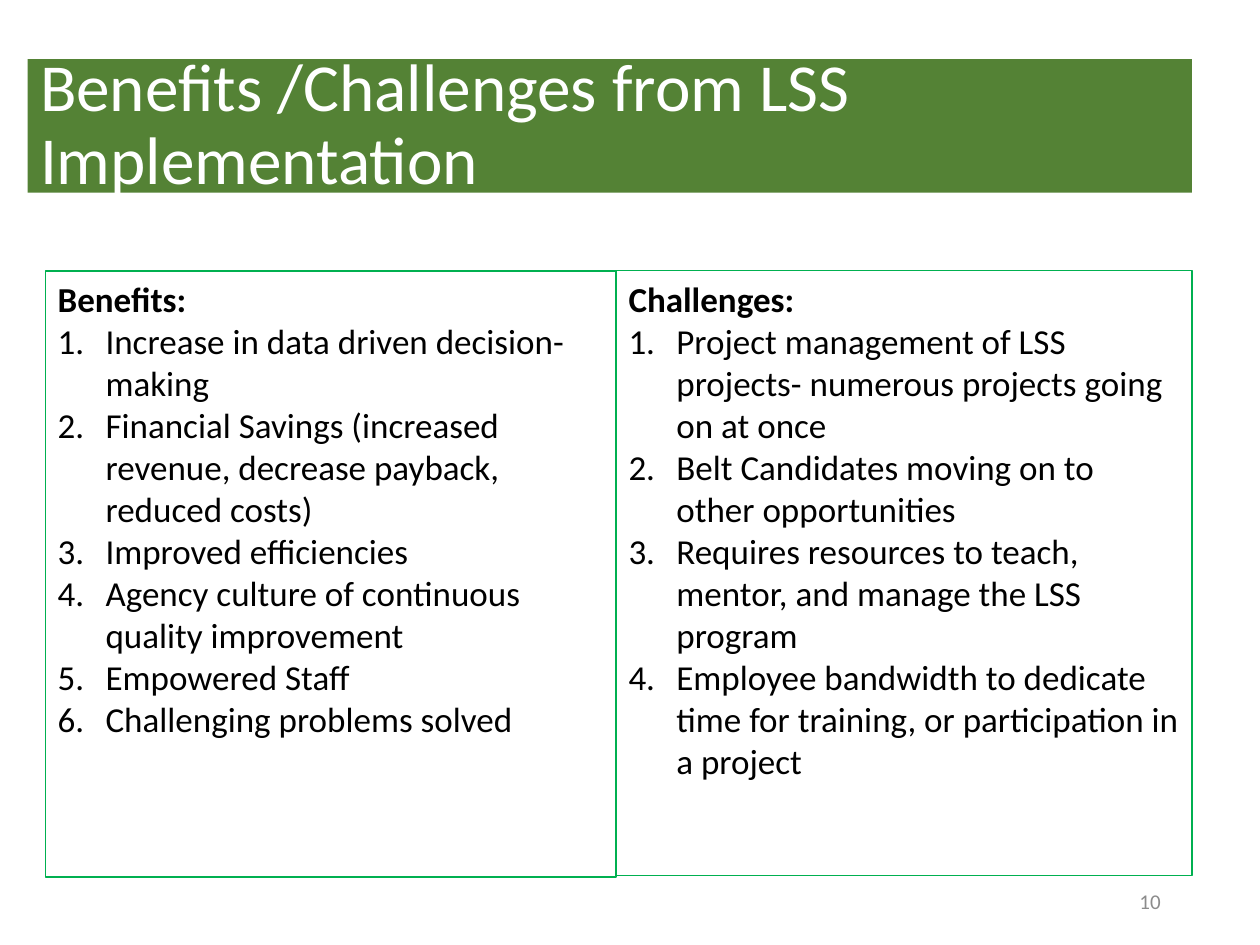
from lxml import etree
from pptx import Presentation
from pptx.dml.color import RGBColor
from pptx.enum.shapes import MSO_SHAPE as Shape
from pptx.enum.text import MSO_ANCHOR as Anchor, PP_ALIGN as Align
from pptx.oxml.ns import qn
from pptx.util import Inches, Pt

# Content
TITLE = "Benefits /Challenges from LSS Implementation"
PAGE_NUMBER = "10"
PANELS = [
    {"heading": "Benefits:", "width": 4.53, "height": 4.81, "points": [
        "Increase in data driven decision-making",
        "Financial Savings (increased revenue, decrease payback, reduced costs)",
        "Improved efficiencies",
        "Agency culture of continuous quality improvement",
        "Empowered Staff",
        "Challenging problems solved",
    ]},
    {"heading": "Challenges:", "width": 4.57, "height": 4.8, "points": [
        "Project management of LSS projects- numerous projects going on at once",
        "Belt Candidates moving on to other opportunities",
        "Requires resources to teach, mentor, and manage the LSS program",
        "Employee bandwidth to dedicate time for training, or participation in a project",
    ]},
]

# Format
COLORS = {"banner": "548235", "border": "00B050", "title": "FFFFFF",
          "body": "000000", "number": "8C8C8C"}
FONT = "Calibri"
PANEL_LEFT, PANEL_TOP = 0.36, 2.15
NUMBER_INDENT = Inches(0.38)


def color(name):
    return RGBColor.from_string(COLORS[name])


def add_rect(left, top, width, height, fill=None, border=None):
    rect = slide.shapes.add_shape(Shape.RECTANGLE, Inches(left), Inches(top),
                                  Inches(width), Inches(height))
    rect.shadow.inherit = False
    if fill:
        rect.fill.solid()
        rect.fill.fore_color.rgb = color(fill)
    else:
        rect.fill.background()
    if border:
        rect.line.color.rgb = color(border)
        rect.line.width = Pt(0.75)
    else:
        rect.line.fill.background()
    return rect


def write(shape, lines, size, ink, anchor=Anchor.TOP, align=Align.LEFT,
          spacing=None, heading=False, numbered=False):
    frame = shape.text_frame
    frame.word_wrap = True
    frame.vertical_anchor = anchor
    for i, line in enumerate(lines):
        paragraph = frame.paragraphs[0] if i == 0 else frame.add_paragraph()
        paragraph.alignment = align
        if spacing:
            paragraph.line_spacing = spacing
        run = paragraph.add_run()
        run.text = line
        run.font.name = FONT
        run.font.size = Pt(size)
        run.font.bold = heading and i == 0
        run.font.color.rgb = color(ink)
        if numbered and not (heading and i == 0):
            props = paragraph._p.get_or_add_pPr()
            props.set("marL", str(NUMBER_INDENT))
            props.set("indent", str(-NUMBER_INDENT))
            etree.SubElement(props, qn("a:buFont"), typeface="+mj-lt")
            etree.SubElement(props, qn("a:buAutoNum"), type="arabicPeriod")


prs = Presentation()
prs.slide_width, prs.slide_height = Inches(10), Inches(7.5)
slide = prs.slides.add_slide(prs.slide_layouts[6])

# Title banner
banner = add_rect(0.22, 0.47, 9.24, 1.06, fill="banner")
write(banner, [TITLE], 38.4, "title", anchor=Anchor.MIDDLE, spacing=0.9)

# Side-by-side panels
left = PANEL_LEFT
for panel in PANELS:
    box = add_rect(left, PANEL_TOP, panel["width"], panel["height"], border="border")
    write(box, [panel["heading"], *panel["points"]], 20, "body",
          heading=True, numbered=True)
    left += panel["width"]

# Page number
page = slide.shapes.add_textbox(Inches(7.06), Inches(6.95), Inches(2.25), Inches(0.4))
write(page, [PAGE_NUMBER], 12, "number", anchor=Anchor.MIDDLE, align=Align.RIGHT)

prs.save("out.pptx")
